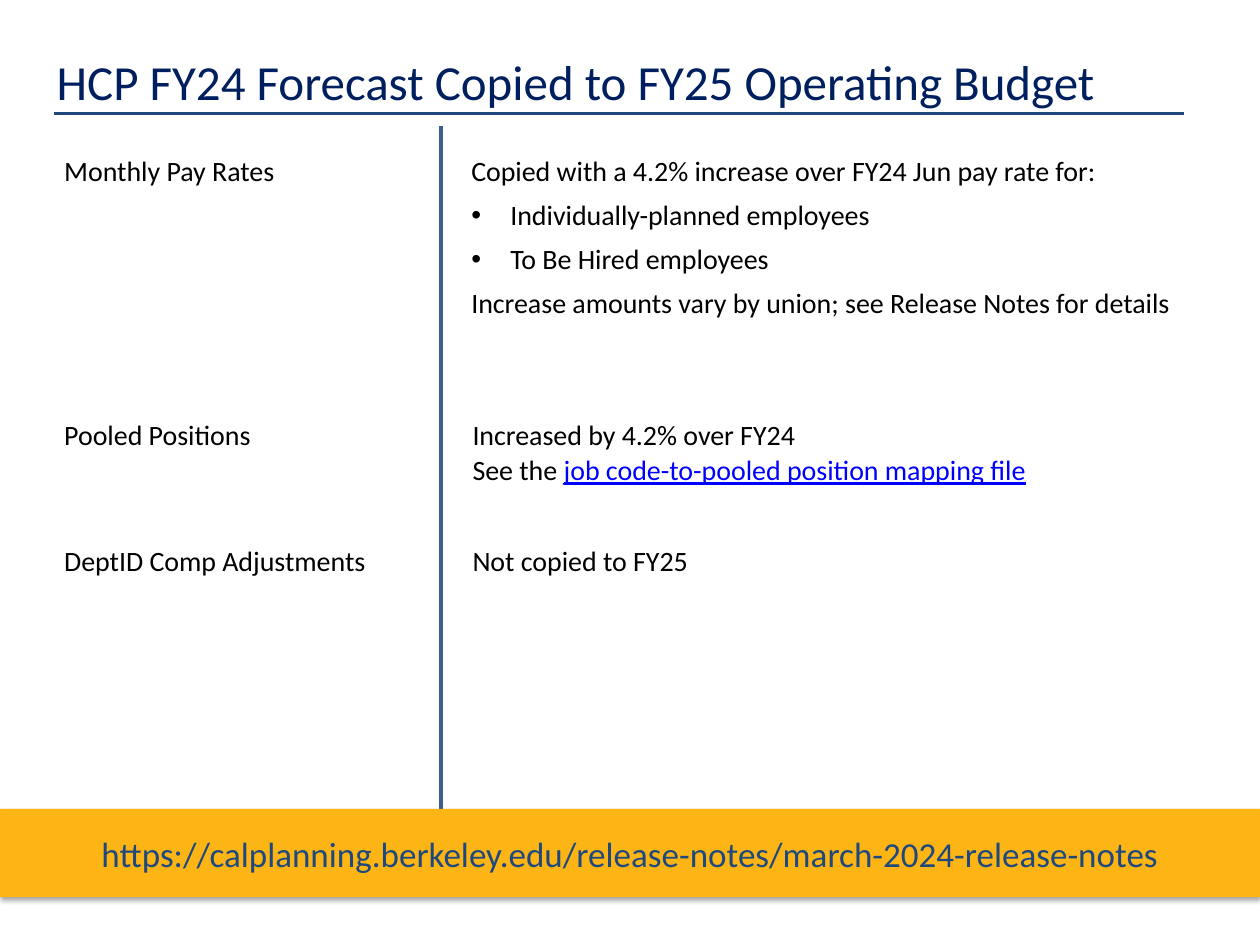
from lxml import etree
from pptx import Presentation
from pptx import util as u
from pptx.dml.color import RGBColor
from pptx.enum import shapes, text
from pptx.oxml import ns

COLORS = {
    "title": "001F5F",
    "rule": "1F497D",
    "divider": "376092",
    "ink": "000000",
    "link": "0000FF",
    "gold": "FDB515",
}
COLUMNS, ROWS = 100, 75
TOPIC, DETAIL, DETAIL_WIDTH = 5, 37.4, 56.5


def rgb(name):
    return RGBColor.from_string(COLORS[name])


def write(paragraph, content, size=16, color="ink", align="LEFT", before=0, after=0,
          indent=0.01, bullet=False, underline=None):
    properties = paragraph._p.get_or_add_pPr()
    if not paragraph.runs:
        hanging = 0.31 if bullet else 0
        properties.set("marL", str(u.Inches(hanging or indent)))
        properties.set("indent", str(-u.Inches(hanging)))
        if bullet:
            etree.SubElement(properties, ns.qn("a:buFont"), typeface="Arial")
            etree.SubElement(properties, ns.qn("a:buChar"), char="•")
        else:
            etree.SubElement(properties, ns.qn("a:buNone"))
        paragraph.alignment = getattr(text.PP_ALIGN, align)
        paragraph.space_before, paragraph.space_after = u.Pt(before), u.Pt(after)
    run = paragraph.add_run()
    run.text = content
    run.font.name, run.font.size = "Calibri", u.Pt(size)
    run.font.color.rgb = rgb(color)
    run.font.underline = underline


class Deck:
    def __init__(self):
        self.file = Presentation()
        self.file.slide_width, self.file.slide_height = u.Inches(10), u.Inches(7.5)
        self.slide = self.file.slides.add_slide(self.file.slide_layouts[1])

    def cells(self, left, top, width, height):
        column = self.file.slide_width / COLUMNS
        row = self.file.slide_height / ROWS
        return [round(n * unit) for n, unit in
                ((left, column), (top, row), (width, column), (height, row))]

    def frame(self, holder):
        frame = holder.text_frame
        frame.word_wrap = True
        frame.auto_size = text.MSO_AUTO_SIZE.NONE
        frame.vertical_anchor = text.MSO_ANCHOR.TOP
        frame.margin_left = frame.margin_right = frame.margin_bottom = 0
        frame.margin_top = u.Inches(0.01)
        return frame

    def fill(self, holder, lines, **style):
        frame = self.frame(holder)
        for number, line in enumerate(lines):
            paragraph = frame.add_paragraph() if number else frame.paragraphs[0]
            for content, extra in line:
                write(paragraph, content, **{**style, **extra})

    def placeholder(self, index, area, lines, **style):
        holder = self.slide.placeholders[index]
        holder.left, holder.top, holder.width, holder.height = self.cells(*area)
        self.fill(holder, lines, **style)

    def textbox(self, area, lines, **style):
        self.fill(self.slide.shapes.add_textbox(*self.cells(*area)), lines, **style)

    def line(self, start, end, color):
        line = self.slide.shapes.add_connector(
            shapes.MSO_CONNECTOR.STRAIGHT, *self.cells(*start, *end))
        line.line.color.rgb, line.line.width = rgb(color), u.Pt(1.75)
        etree.SubElement(line._element.spPr, ns.qn("a:effectLst"))

    def banner(self, area, content, **style):
        band = self.slide.shapes.add_shape(shapes.MSO_SHAPE.RECTANGLE, *self.cells(*area))
        band.fill.solid()
        band.fill.fore_color.rgb = rgb("gold")
        band.line.fill.background()
        band.shadow.inherit = False
        effects = band._element.spPr.find(ns.qn("a:effectLst"))
        shadow = etree.SubElement(
            effects, ns.qn("a:outerShdw"), blurRad=str(u.Pt(3.1)), dist=str(u.Pt(1.8)),
            dir="5400000", rotWithShape="0")
        tint = etree.SubElement(shadow, ns.qn("a:srgbClr"), val=COLORS["ink"])
        etree.SubElement(tint, ns.qn("a:alpha"), val="35000")
        band.text_frame.vertical_anchor = text.MSO_ANCHOR.MIDDLE
        write(band.text_frame.paragraphs[0], content, align="CENTER", indent=0, **style)


def main():
    deck = Deck()
    deck.placeholder(0, (4.4, 4, 89.6, 4.9),
                     [[("HCP FY24 Forecast Copied to FY25 Operating Budget", {})]],
                     size=28, color="title")
    deck.line((4.3, 9), (94, 9), "rule")
    deck.placeholder(1, (DETAIL, 12.1, DETAIL_WIDTH, 13.4), [
        [("Copied with a 4.2% increase over FY24 Jun pay rate for:", {})],
        [("Individually-planned employees", {"bullet": True})],
        [("To Be Hired employees", {"bullet": True})],
        [("Increase amounts vary by union; see Release Notes for details", {})],
    ], after=6, indent=0)
    deck.line((35, 10), (35, 65.1), "divider")

    for topic, top, width in (("Monthly Pay Rates", 12.1, 19.9),
                              ("Pooled Positions", 33, 19.9),
                              ("DeptID Comp Adjustments", 43, 25)):
        deck.textbox((TOPIC, top, width, 2.8), [[(topic, {})]])

    deck.textbox((DETAIL, 33, DETAIL_WIDTH, 8.8), [
        [("Increased by 4.2% over FY24", {})],
        [("See the ", {"before": 0.9}),
         ("job code-to-pooled position mapping file", {"color": "link", "underline": True})],
    ])
    deck.textbox((DETAIL, 43, DETAIL_WIDTH, 2.8), [[("Not copied to FY25", {})]])
    deck.banner((0, 64.2, 100, 7),
                "https://calplanning.berkeley.edu/release-notes/march-2024-release-notes",
                size=20, color="rule")
    deck.file.save("out.pptx")


if __name__ == "__main__":
    main()
